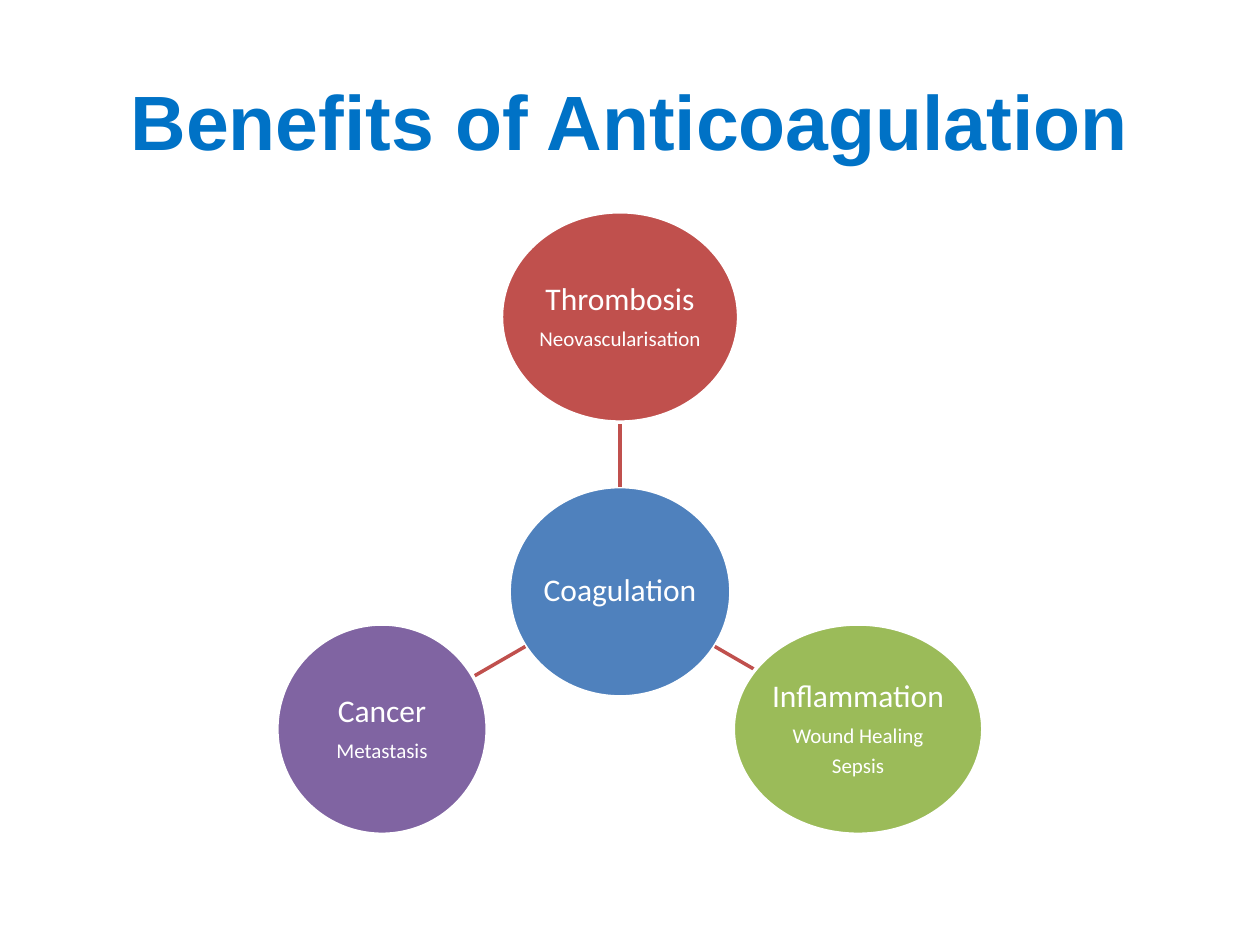
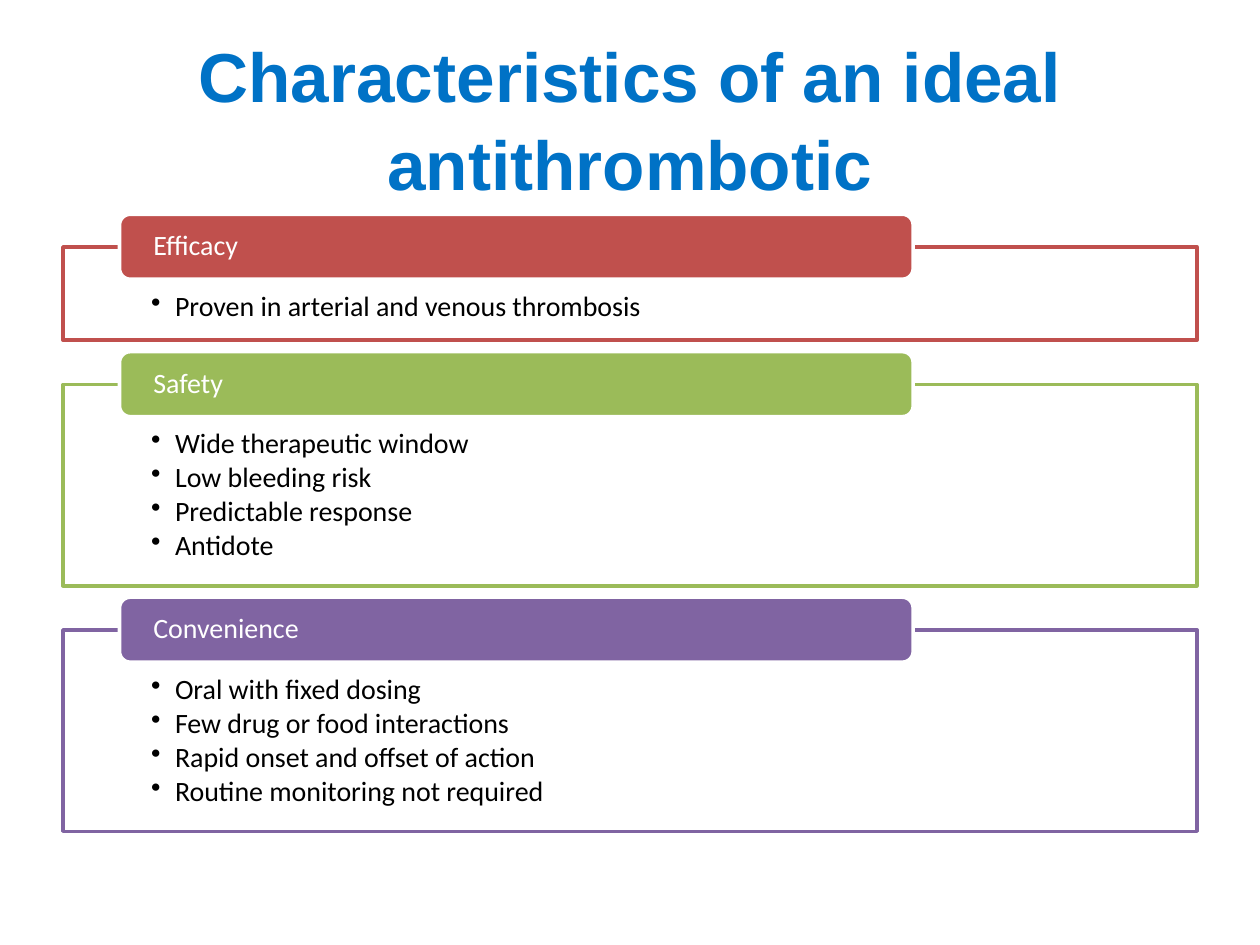
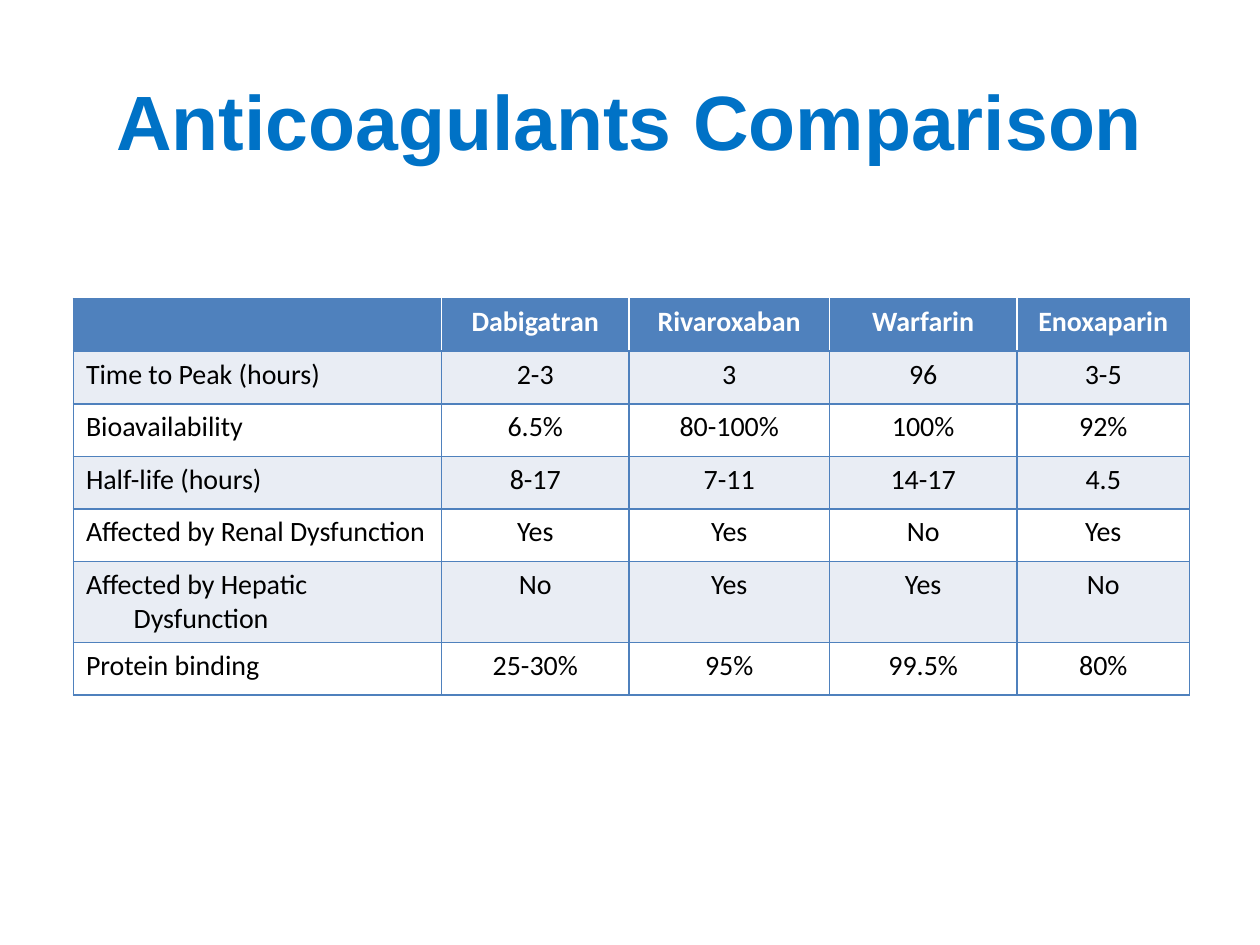
from math import cos, hypot, radians, sin

from lxml.etree import SubElement
from pptx import Presentation
from pptx.dml.color import RGBColor
from pptx.enum.shapes import MSO_CONNECTOR, MSO_SHAPE
from pptx.enum.text import MSO_ANCHOR, MSO_AUTO_SIZE, PP_ALIGN
from pptx.oxml.ns import qn
from pptx.util import Cm, Pt

BLUE, RED, GREEN, PURPLE = "4F81BD", "C0504D", "9BBB59", "8064A2"
WHITE, BLACK, BAND, TITLE = "FFFFFF", "000000", "E9EDF4", "0072C6"


def paint(fill, colour):
    fill.solid()
    fill.fore_color.rgb = RGBColor.from_string(colour)


def write(frame, text, size, colour, align=PP_ALIGN.CENTER, bold=False, face="Calibri"):
    para = frame.paragraphs[-1]
    if para.runs:
        para = frame.add_paragraph()
    para.alignment = align
    span = para.add_run()
    span.text = text
    span.font.size = Pt(size)
    span.font.bold = bold
    span.font.name = face
    paint(span.font.fill, colour)
    return para


deck = Presentation()
deck.slide_width, deck.slide_height = Cm(25.4), Cm(19.05)

pages = []
for heading, size in [
    ("Benefits of Anticoagulation", 44),
    ("Characteristics of an ideal antithrombotic", 39.6),
    ("Anticoagulants Comparison", 44),
]:
    page = deck.slides.add_slide(deck.slide_layouts[5])
    title = page.shapes.title
    title.left, title.top, title.width, title.height = Cm(1.27), Cm(0.76), Cm(22.86), Cm(3.18)
    title.text_frame.auto_size = MSO_AUTO_SIZE.NONE
    title.text_frame.vertical_anchor = MSO_ANCHOR.MIDDLE
    para = write(title.text_frame, heading, size, TITLE, bold=True, face="Arial")
    para.line_spacing = 1.06
    pages.append(page)
benefits, ideal, comparison = pages

hub_x, hub_y, orbit = 12.5, 11.93, 5.54
hub_width, circle_height = 4.47, 4.24
circles = [
    (None, hub_width, BLUE, ["Coagulation"]),
    (-90, 4.78, RED, ["Thrombosis", "Neovascularisation"]),
    (30, 5.03, GREEN, ["Inflammation", "Wound Healing", "Sepsis"]),
    (150, 4.24, PURPLE, ["Cancer", "Metastasis"]),
]
for angle, width, colour, words in circles:
    x, y = hub_x, hub_y
    if angle is not None:
        across, down = cos(radians(angle)), sin(radians(angle))
        x, y = hub_x + orbit * across, hub_y + orbit * down
        start = 0.5 / hypot(across / hub_width, down / circle_height)
        stop = orbit - 0.5 / hypot(across / width, down / circle_height)
        spoke = benefits.shapes.add_connector(
            MSO_CONNECTOR.STRAIGHT,
            Cm(hub_x + start * across), Cm(hub_y + start * down),
            Cm(hub_x + stop * across), Cm(hub_y + stop * down))
        paint(spoke.line.fill, RED)
        spoke.line.width = Pt(2)
        SubElement(spoke._element.spPr, qn("a:effectLst"))
    circle = benefits.shapes.add_shape(
        MSO_SHAPE.OVAL, Cm(x - width / 2), Cm(y - circle_height / 2), Cm(width), Cm(circle_height))
    circle.shadow.inherit = False
    paint(circle.fill, colour)
    paint(circle.line.fill, WHITE)
    circle.line.width = Pt(2)
    frame = circle.text_frame
    frame.word_wrap = True
    frame.vertical_anchor = MSO_ANCHOR.MIDDLE
    frame.margin_left = frame.margin_right = frame.margin_top = frame.margin_bottom = Cm(0.03)
    for position, word in enumerate(words):
        size = 12 if position else 18
        para = write(frame, word, size, WHITE)
        para.line_spacing = 0.9
        para.space_after = Pt(size * 0.35)

sections = [
    ("Efficacy", RED, 1.88, ["Proven in arterial and venous thrombosis"]),
    ("Safety", GREEN, 4.06,
     ["Wide therapeutic window", "Low bleeding risk", "Predictable response", "Antidote"]),
    ("Convenience", PURPLE, 4.06,
     ["Oral with fixed dosing", "Few drug or food interactions",
      "Rapid onset and offset of action", "Routine monitoring not required"]),
]
top = 4.98
for name, colour, height, points in sections:
    panel = ideal.shapes.add_shape(MSO_SHAPE.RECTANGLE, Cm(1.27), Cm(top), Cm(22.86), Cm(height))
    tab = ideal.shapes.add_shape(
        MSO_SHAPE.ROUNDED_RECTANGLE, Cm(2.41), Cm(top - 0.66), Cm(16), Cm(1.31))
    for box, fill, edge, anchor, side, upper, lower in [
        (panel, WHITE, colour, MSO_ANCHOR.TOP, 1.78, 0.91, 0.3),
        (tab, colour, WHITE, MSO_ANCHOR.MIDDLE, 0.62, 0, 0),
    ]:
        box.shadow.inherit = False
        paint(box.fill, fill)
        paint(box.line.fill, edge)
        box.line.width = Pt(2)
        frame = box.text_frame
        frame.word_wrap = True
        frame.vertical_anchor = anchor
        frame.margin_left = frame.margin_right = Cm(side)
        frame.margin_top, frame.margin_bottom = Cm(upper), Cm(lower)
    para = write(tab.text_frame, name, 16, WHITE, PP_ALIGN.LEFT)
    para.line_spacing = 0.9
    para.space_after = Pt(5.6)
    for point in points:
        para = write(panel.text_frame, point, 16, BLACK, PP_ALIGN.LEFT)
        properties = para._p.get_or_add_pPr()
        properties.set("marL", str(Cm(0.48)))
        properties.set("indent", str(-Cm(0.48)))
        SubElement(properties, qn("a:buChar"), char="•")
        para.line_spacing = 0.9
        para.space_after = Pt(2.2)
    top += height + 0.89

rows = [
    ["", "Dabigatran", "Rivaroxaban", "Warfarin", "Enoxaparin"],
    ["Time to Peak (hours)", "2-3", "3", "96", "3-5"],
    ["Bioavailability", "6.5%", "80-100%", "100%", "92%"],
    ["Half-life (hours)", "8-17", "7-11", "14-17", "4.5"],
    ["Affected by Renal Dysfunction", "Yes", "Yes", "No", "Yes"],
    ["Affected by Hepatic Dysfunction", "No", "Yes", "Yes", "No"],
    ["Protein binding", "25-30%", "95%", "99.5%", "80%"],
]
widths = [7.42, 3.78, 4.04, 3.78, 3.48]
row_height = 1.06
table = comparison.shapes.add_table(
    len(rows), len(widths), Cm(1.48), Cm(6.02), Cm(sum(widths)), Cm(row_height * len(rows))).table
for column, width in zip(table.columns, widths):
    column.width = Cm(width)
for r, values in enumerate(rows):
    table.rows[r].height = Cm(row_height)
    for c, value in enumerate(values):
        cell = table.cell(r, c)
        borders = {"L": BLUE, "R": BLUE, "T": BLUE, "B": BLUE}
        if r == 0 and c > 0:
            borders["L"] = WHITE
        if r == 0 and c < len(widths) - 1:
            borders["R"] = WHITE
        for side, colour in borders.items():
            line = SubElement(cell._tc.get_or_add_tcPr(), qn("a:ln" + side), w=str(Pt(1)))
            SubElement(SubElement(line, qn("a:solidFill")), qn("a:srgbClr"), val=colour)
        paint(cell.fill, BLUE if r == 0 else BAND if r % 2 else WHITE)
        if value:
            para = write(cell.text_frame, value, 16, BLACK if r else WHITE,
                         PP_ALIGN.CENTER if c else PP_ALIGN.LEFT, bold=r == 0)
            properties = para._p.get_or_add_pPr()
            properties.set("marL", str(Cm(0.96)))
            properties.set("indent", str(-Cm(0.96)))

deck.save("out.pptx")
